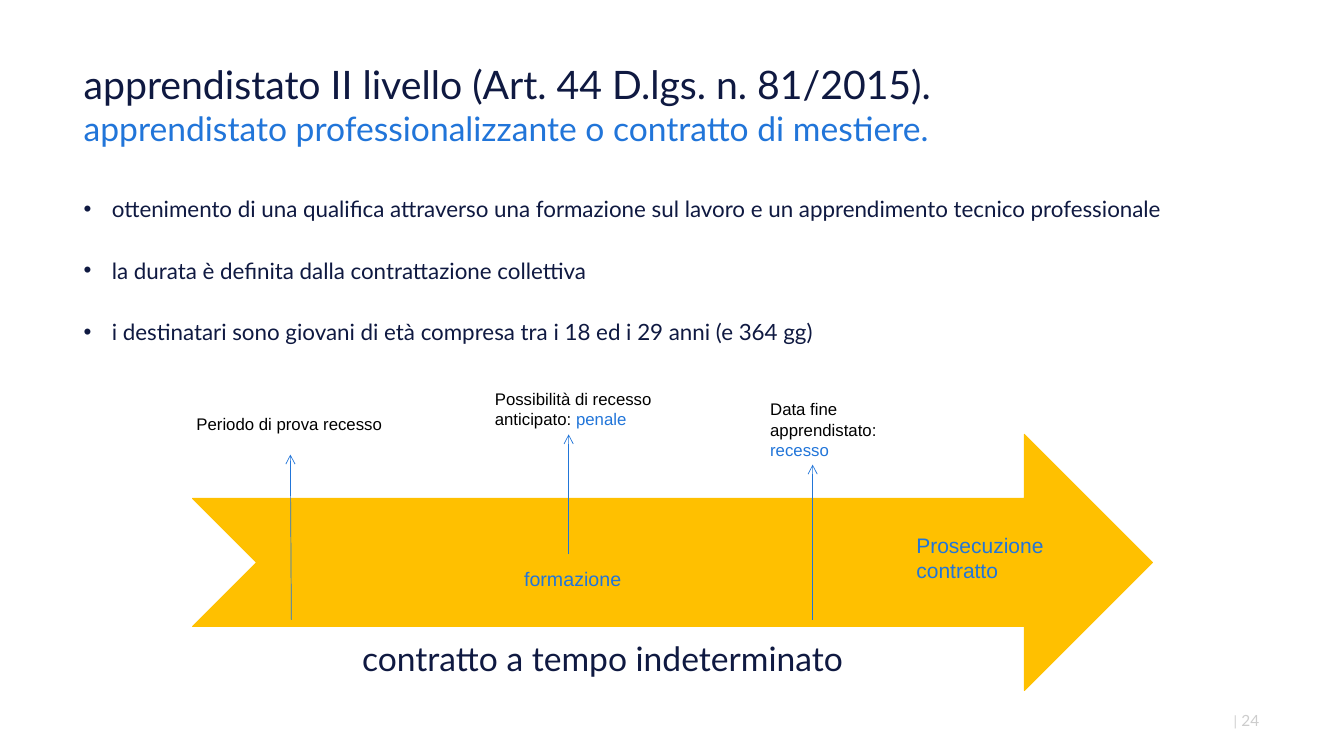
from lxml import etree
from pptx import Presentation
from pptx import util as u
from pptx.dml.color import RGBColor
from pptx.enum import shapes, text
from pptx.oxml import ns

NAVY = RGBColor(0x0F, 0x19, 0x41)
BLUE = RGBColor(0x21, 0x75, 0xD9)
AMBER = RGBColor(0xFF, 0xC0, 0x00)
GREY = RGBColor(0xCD, 0xCD, 0xCD)
WHITE = RGBColor(0xFF, 0xFF, 0xFF)
BLACK = RGBColor(0, 0, 0)

TITLE = [
    ("apprendistato II livello (Art. 44 D.lgs. n. 81/2015).", 28, NAVY),
    ("apprendistato professionalizzante o contratto di mestiere.", 24, BLUE),
]
BULLETS = [
    "ottenimento di una qualifica attraverso una formazione sul lavoro e un apprendimento tecnico professionale",
    "la durata è definita dalla contrattazione collettiva",
    "i destinatari sono giovani di età compresa tra i 18 ed i 29 anni (e 364 gg)",
]
LABELS = [
    ((1.85, 4.06, 2.17, 0.3), 12, [("Periodo di prova recesso", BLACK)]),
    ((4.81, 3.81, 2.34, 0.5), 12, [("Possibilità di recesso anticipato: ", BLACK), ("penale", BLUE)]),
    ((7.54, 3.91, 1.85, 0.71), 12, [("Data fine apprendistato: ", BLACK), ("recesso", BLUE)]),
    ((5.1, 5.58, 2.04, 0.34), 14, [("formazione", BLUE)]),
    ((8.99, 5.23, 1.75, 0.71), 15, [("Prosecuzione contratto", BLUE)]),
]
MILESTONES = [
    ((2.89, 6.15), (2.88, 4.51)),
    ((5.64, 5.5), (5.64, 4.31)),
    ((8.06, 6.15), (8.06, 4.61)),
]


class SlideBuilder:
    heading_font = "Lato"
    label_font = "Arial"

    def __init__(self, deck):
        self.slide = deck.slides.add_slide(deck.slide_layouts[5])

    def format_span(self, span, font, size, color):
        span.font.name = font
        span.font.size = u.Pt(size)
        span.font.color.rgb = color

    def frame(self, box, insets, anchor=text.MSO_ANCHOR.TOP):
        frame = box.text_frame
        frame.word_wrap = True
        frame.auto_size = text.MSO_AUTO_SIZE.NONE
        frame.vertical_anchor = anchor
        frame.margin_left, frame.margin_top, frame.margin_right, frame.margin_bottom = map(u.Inches, insets)
        return frame

    def text_box(self, place, insets=(0.1, 0.05, 0.1, 0.05), anchor=text.MSO_ANCHOR.TOP):
        box = self.slide.shapes.add_textbox(*map(u.Inches, place))
        return self.frame(box, insets, anchor)

    def title(self, place, lines):
        box = self.slide.shapes.title
        box.left, box.top, box.width, box.height = map(u.Inches, place)
        frame = self.frame(box, (0, 0, 0, 0))
        frame.text = "\n".join(line for line, _, _ in lines)
        for para, (_, size, color) in zip(frame.paragraphs, lines):
            para.alignment = text.PP_ALIGN.LEFT
            self.format_span(para.runs[0], self.heading_font, size, color)

    def bullets(self, place, items):
        frame = self.text_box(place, (0, 0.08, 0, 0))
        frame.text = "\n".join(items)
        for index, para in enumerate(frame.paragraphs):
            properties = para._p.get_or_add_pPr()
            properties.set("marL", str(u.Inches(0.28)))
            properties.set("indent", str(-u.Inches(0.28)))
            etree.SubElement(properties, ns.qn("a:buFont"), typeface="Arial")
            etree.SubElement(properties, ns.qn("a:buChar"), char="•")
            para.line_spacing = 1.14
            if index:
                para.space_before = u.Pt(22)
            self.format_span(para.runs[0], self.heading_font, 16, NAVY)

    def label(self, place, size, parts):
        para = self.text_box(place).paragraphs[0]
        for words, color in parts:
            span = para.add_run()
            span.text = words
            self.format_span(span, self.label_font, size, color)

    def footer(self, place, words, size):
        frame = self.text_box(place, (0, 0, 0, 0), text.MSO_ANCHOR.MIDDLE)
        frame.word_wrap = False
        frame.text = words
        para = frame.paragraphs[0]
        para.alignment = text.PP_ALIGN.RIGHT
        self.format_span(para.runs[0], self.heading_font, size, GREY)

    def shape(self, kind, place, color):
        box = self.slide.shapes.add_shape(kind, *map(u.Inches, place))
        box.shadow.inherit = False
        box.fill.solid()
        box.fill.fore_color.rgb = color
        box.line.color.rgb = color
        box.line.width = u.Pt(0.75)
        return box

    def caption(self, place, words):
        box = self.shape(shapes.MSO_SHAPE.RECTANGLE, place, WHITE)
        frame = self.frame(box, (0.1, 0.05, 0.1, 0.05), text.MSO_ANCHOR.MIDDLE)
        frame.text = words
        para = frame.paragraphs[0]
        para.alignment = text.PP_ALIGN.CENTER
        self.format_span(para.runs[0], self.heading_font, 24, NAVY)

    def arrow(self, start, end):
        line = self.slide.shapes.add_connector(shapes.MSO_CONNECTOR.STRAIGHT, *map(u.Inches, start + end))
        line.line.color.rgb = BLUE
        line.line.width = u.Pt(0.5)
        etree.SubElement(line.line._get_or_add_ln(), ns.qn("a:tailEnd"), type="arrow")
        etree.SubElement(line._element.spPr, ns.qn("a:effectLst"))


def main():
    deck = Presentation()
    deck.slide_width = u.Inches(13.33)
    deck.slide_height = u.Inches(7.5)
    page = SlideBuilder(deck)
    page.title((0.83, 0.6, 11.67, 1.02), TITLE)
    page.bullets((0.83, 1.82, 11.67, 4.92), BULLETS)
    page.footer((12.2, 6.95, 0.07, 0.4), "|", 10)
    page.footer((12.21, 6.95, 0.28, 0.4), "24", 11)
    page.shape(shapes.MSO_SHAPE.NOTCHED_RIGHT_ARROW, (1.91, 4.31, 9.52, 2.54), AMBER)
    page.caption((1.82, 6.28, 8.31, 0.5), "contratto a tempo indeterminato")
    for start, end in MILESTONES:
        page.arrow(start, end)
    for place, size, parts in LABELS:
        page.label(place, size, parts)
    deck.save("out.pptx")


if __name__ == "__main__":
    main()
